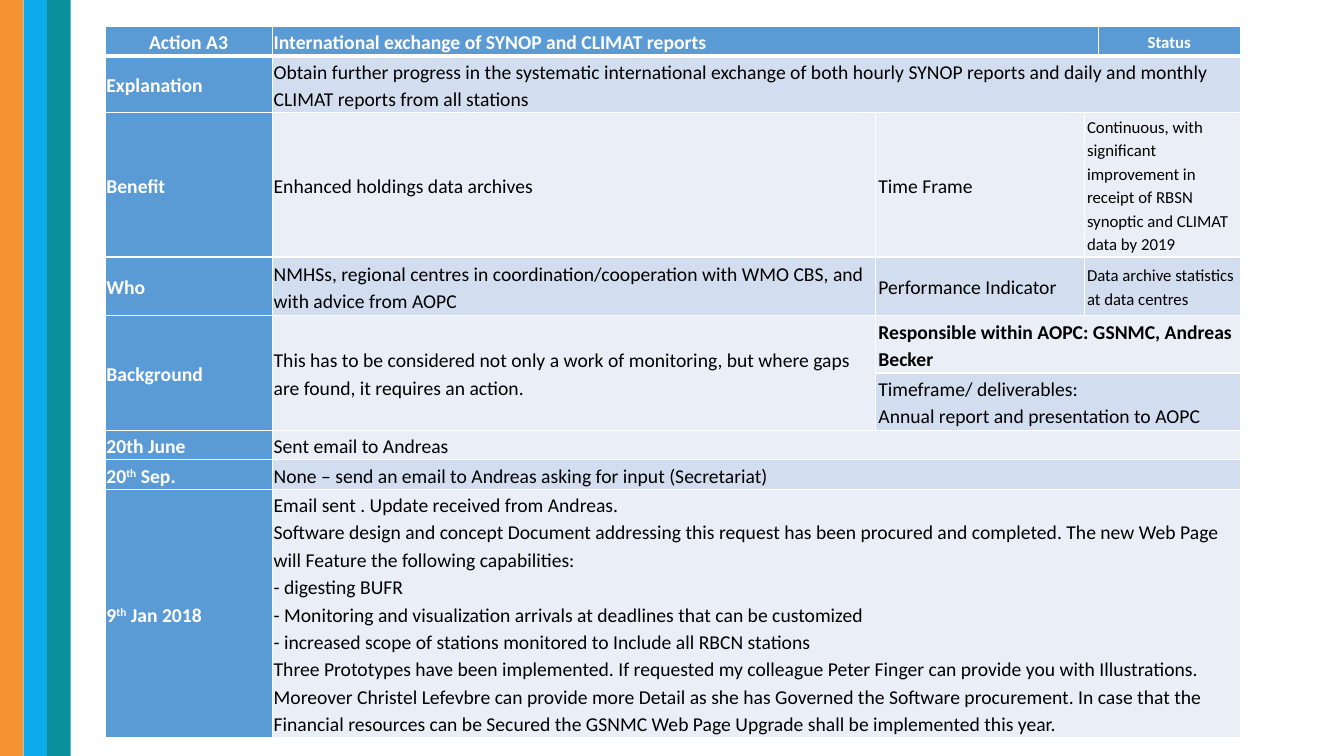
import pptx
import pptx.dml.color
import pptx.enum.shapes
import pptx.enum.text
import pptx.oxml
import pptx.oxml.ns
import pptx.util

Pt = pptx.util.Pt
ALIGN = pptx.enum.text.PP_ALIGN
COLORS = {
    "orange": "F49234", "sky": "0CADEA", "teal": "0A8F9D",
    "label": "5B9BD5", "dark": "D2DEEF", "light": "EAEFF7",
    "white": "FFFFFF", "black": "000000",
}
COLUMN_WIDTHS = [119.5, 431, 149, 10, 101.5]
ROW_HEIGHTS = [20, 40, 103, 42, 41, 41, 20.5, 20.5, 177]

UPDATE = [
    "Email sent . Update received from Andreas.",
    "Software design and concept Document addressing this request has been procured and completed. "
    "The new Web Page will Feature the following capabilities:",
    "- digesting BUFR",
    "- Monitoring and visualization arrivals at deadlines that can be customized",
    "- increased scope of stations monitored to Include all RBCN stations",
    "Three Prototypes have been implemented. If requested my colleague Peter Finger can provide you "
    "with Illustrations. Moreover Christel Lefevbre can provide more Detail as she has Governed the "
    "Software procurement. In case that the Financial resources can be Secured the GSNMC Web Page "
    "Upgrade shall be implemented this year.",
]

LABEL = {"fill": "label", "color": "white", "bold": True}
DARK = {"fill": "dark"}
LIGHT = {"fill": "light"}
SMALL = {"size": 12, "side": 2}
WIDE = {"side": 2}

# Each cell: row, column, rows spanned, columns spanned, paragraphs, format.
# A paragraph is a string, or a list of spans where every second one is raised.
CELLS = [
    (0, 0, 1, 1, ["Action A3"], LABEL | {"align": ALIGN.CENTER}),
    (0, 1, 1, 3, ["International exchange of SYNOP and CLIMAT reports"], LABEL),
    (0, 4, 1, 1, ["Status"], LABEL | SMALL | {"align": ALIGN.CENTER}),
    (1, 0, 1, 1, ["Explanation"], LABEL),
    (1, 1, 1, 4, ["Obtain further progress in the systematic international exchange of both hourly "
                  "SYNOP reports and daily and monthly CLIMAT reports from all stations"], DARK),
    (2, 0, 1, 1, ["Benefit"], LABEL),
    (2, 1, 1, 1, ["Enhanced holdings data archives"], LIGHT),
    (2, 2, 1, 1, ["Time Frame"], LIGHT | WIDE),
    (2, 3, 1, 2, ["Continuous, with significant improvement in receipt of RBSN synoptic and CLIMAT "
                  "data by 2019"], LIGHT | SMALL),
    (3, 0, 1, 1, ["Who"], LABEL),
    (3, 1, 1, 1, ["NMHSs, regional centres in coordination/cooperation with WMO CBS, and with advice "
                  "from AOPC"], DARK),
    (3, 2, 1, 1, ["Performance Indicator"], DARK | WIDE),
    (3, 3, 1, 2, ["Data archive statistics at data centres"], DARK | SMALL),
    (4, 0, 2, 1, ["Background"], LABEL),
    (4, 1, 2, 1, ["This has to be considered not only a work of monitoring, but where gaps are found, "
                  "it requires an action."], LIGHT),
    (4, 2, 1, 3, ["Responsible within AOPC: GSNMC, Andreas Becker"], LIGHT | WIDE | {"bold": True}),
    (5, 2, 1, 3, ["Timeframe/ deliverables:", "Annual report and presentation to AOPC"], DARK | WIDE),
    (6, 0, 1, 1, ["20th June"], LABEL),
    (6, 1, 1, 4, ["Sent email to Andreas"], LIGHT),
    (7, 0, 1, 1, [["20", "th", " Sep."]], LABEL),
    (7, 1, 1, 4, ["None – send an email to Andreas asking for input (Secretariat)"], DARK),
    (8, 0, 1, 1, [["9", "th", " Jan 2018"]], LABEL),
    (8, 1, 1, 4, UPDATE, LIGHT),
]


def rgb(name):
    return pptx.dml.color.RGBColor.from_string(COLORS[name])


def write_text(frame, paragraphs, size=14, color="black", bold=False, align=ALIGN.LEFT):
    for index, content in enumerate(paragraphs):
        para = frame.paragraphs[0] if index == 0 else frame.add_paragraph()
        para.alignment = align
        para.line_spacing = 1.15
        spans = [content] if isinstance(content, str) else content
        for position, text in enumerate(spans):
            span = para.add_run()
            span.text = text
            span.font.name = "Calibri"
            span.font.size = Pt(size)
            span.font.bold = bold
            span.font.color.rgb = rgb(color)
            if position % 2:
                span._r.get_or_add_rPr().set("baseline", "30000")


def set_borders(cell, top=1, bottom=1):
    properties = cell._tc.get_or_add_tcPr()
    widths = {"lnL": 1, "lnR": 1, "lnT": top, "lnB": bottom}
    for index, (edge, width) in enumerate(widths.items()):
        line = pptx.oxml.parse_xml(
            f'<a:{edge} {pptx.oxml.ns.nsdecls("a")} w="{Pt(width)}"><a:solidFill>'
            f'<a:srgbClr val="{COLORS["white"]}"/></a:solidFill></a:{edge}>')
        properties.insert(index, line)


def fill_cell(cell, paragraphs, fill, side=1, **text_format):
    cell.vertical_anchor = pptx.enum.text.MSO_ANCHOR.MIDDLE
    cell.margin_left = cell.margin_right = Pt(side)
    cell.margin_top = cell.margin_bottom = Pt(0.7)
    cell.fill.solid()
    cell.fill.fore_color.rgb = rgb(fill)
    write_text(cell.text_frame, paragraphs, **text_format)


def add_side_bars(page, left, top, width, height):
    names = ["orange", "sky", "teal"]
    bar_width = width / len(names)
    for index, name in enumerate(names):
        bar = page.shapes.add_shape(
            pptx.enum.shapes.MSO_SHAPE.RECTANGLE,
            Pt(left + index * bar_width), Pt(top), Pt(bar_width), Pt(height))
        bar.shadow.inherit = False
        bar.fill.solid()
        bar.fill.fore_color.rgb = rgb(name)
        bar.line.fill.background()


def add_action_table(page, left, top):
    table = page.shapes.add_table(
        len(ROW_HEIGHTS), len(COLUMN_WIDTHS), Pt(left), Pt(top),
        Pt(sum(COLUMN_WIDTHS)), Pt(sum(ROW_HEIGHTS))).table
    table.first_row = table.horz_banding = False
    for column, width in zip(table.columns, COLUMN_WIDTHS):
        column.width = Pt(width)
    for row, height in zip(table.rows, ROW_HEIGHTS):
        row.height = Pt(height)
    for row, column, down, across, paragraphs, style in CELLS:
        cell = table.cell(row, column)
        if down * across > 1:
            cell.merge(table.cell(row + down - 1, column + across - 1))
        fill_cell(cell, paragraphs, **style)
    # The rule below the heading row is heavier
    for index, row in enumerate(table.rows):
        for cell in row.cells:
            set_borders(cell, top=3 if index == 1 else 1, bottom=3 if index == 0 else 1)


def main():
    deck = pptx.Presentation()
    deck.slide_width, deck.slide_height = Pt(960), Pt(540)
    page = deck.slides.add_slide(deck.slide_layouts[6])
    add_side_bars(page, 0, 0, 50.4, 540)
    add_action_table(page, 75, 19)
    deck.save("out.pptx")


if __name__ == "__main__":
    main()
